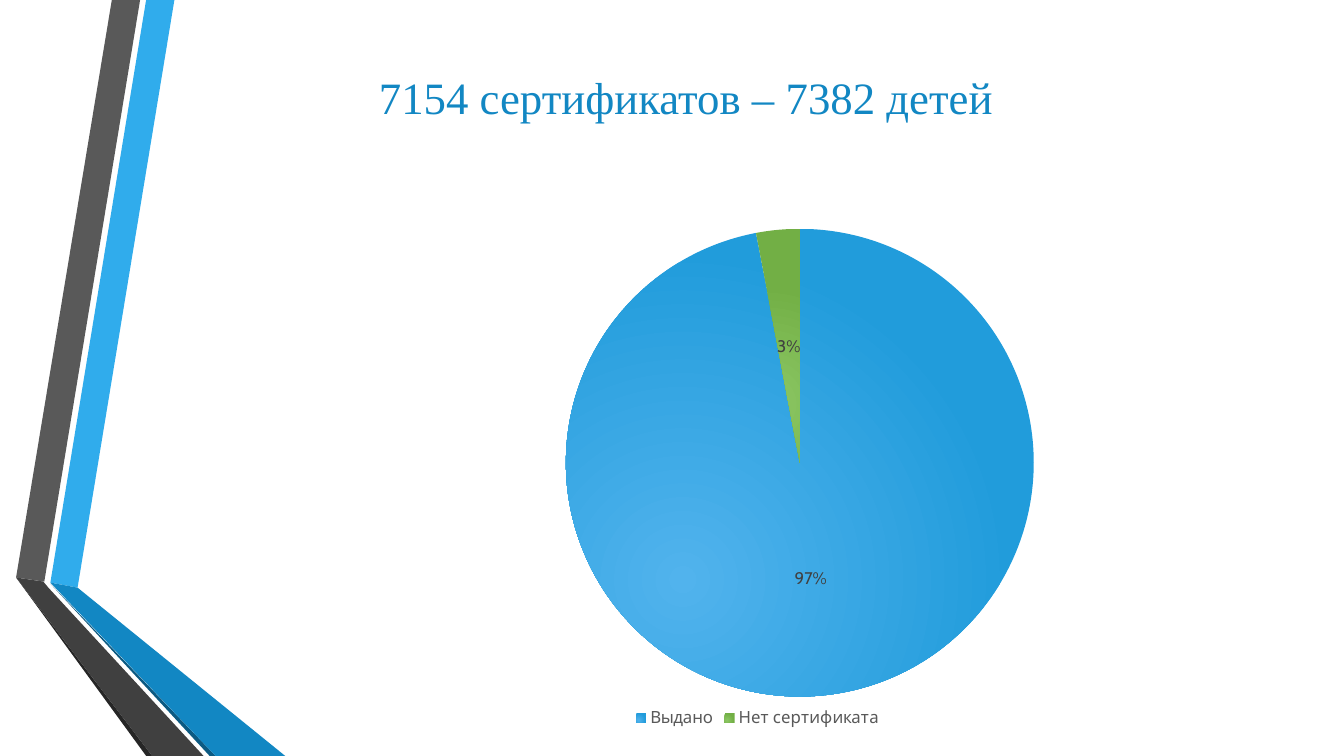
import pptx
import pptx.chart.data
import pptx.dml.color
import pptx.enum.chart
import pptx.enum.text
import pptx.oxml
import pptx.oxml.ns
import pptx.util

PX = 9144
HUES = {
    "sky": "30ACEC", "gray": "595959", "black": "262626", "navy": "0C5A82",
    "blue": "1287C3", "dark": "404040",
}
BANDS = [
    ("sky", [(50, 578), (77, 583), (173, 0), (145, 0)]),
    ("gray", [(139, 0), (111, 0), (16, 573), (44, 577)]),
    ("black", [(16, 573), (145, 750), (151, 750)]),
    ("navy", [(50, 579), (208, 750), (214, 750)]),
    ("blue", [(50, 578), (214, 750), (283, 750), (77, 583)]),
    ("dark", [(202, 750), (48, 583), (43, 577), (16, 573), (151, 750)]),
]
SLICES = [
    ("Выдано", 97, "51B3ED", "219CDB"),
    ("Нет сертификата", 3, "8CC764", "72AF45"),
]


class Deck:
    """Holds the style and the current slide, and draws each kind of element."""

    def __init__(self, wide, high):
        self.file = pptx.Presentation()
        self.file.slide_width = wide * PX
        self.file.slide_height = high * PX
        self.slide = self.file.slides.add_slide(self.file.slide_layouts[5])

    def style(self, font, face, size, hue):
        font.name = face
        font.size = pptx.util.Pt(size)
        font.color.rgb = pptx.dml.color.RGBColor.from_string(HUES[hue])

    def title(self, text, box):
        shape = self.slide.shapes.title
        shape.left, shape.top, shape.width, shape.height = [n * PX for n in box]
        frame = shape.text_frame
        frame.text = text
        frame.vertical_anchor = pptx.enum.text.MSO_ANCHOR.MIDDLE
        line = frame.paragraphs[0]
        line.alignment = pptx.enum.text.PP_ALIGN.CENTER
        self.style(line.font, "Times New Roman", 32, "blue")

    def band(self, hue, points):
        pen = self.slide.shapes.build_freeform(*points[0], scale=PX)
        pen.add_line_segments(points[1:], close=True)
        shape = pen.convert_to_shape()
        shape.shadow.inherit = False
        shape.fill.solid()
        shape.fill.fore_color.rgb = pptx.dml.color.RGBColor.from_string(HUES[hue])
        shape.line.fill.background()

    def glow(self, point, inner, outer):
        point.format.line.fill.background()
        point.format.fill.solid()
        grad = pptx.oxml.parse_xml(
            f'<a:gradFill {pptx.oxml.ns.nsdecls("a")} rotWithShape="1"><a:gsLst>'
            f'<a:gs pos="0"><a:srgbClr val="{inner}"/></a:gs>'
            f'<a:gs pos="100000"><a:srgbClr val="{outer}"/></a:gs></a:gsLst>'
            '<a:path path="circle"><a:fillToRect l="50000" t="100000" '
            'r="100000" b="50000"/></a:path></a:gradFill>')
        old = self.chart.element.xpath(".//c:dPt/c:spPr/a:solidFill")[0]
        old.getparent().replace(old, grad)

    def place(self, x, y, w, h):
        area = self.chart.element.xpath(".//c:plotArea")[0]
        for old in area.xpath("./c:layout"):
            area.remove(old)
        area.insert(0, pptx.oxml.parse_xml(
            f'<c:layout {pptx.oxml.ns.nsdecls("c")}><c:manualLayout>'
            '<c:layoutTarget val="inner"/><c:xMode val="edge"/><c:yMode val="edge"/>'
            f'<c:x val="{x}"/><c:y val="{y}"/><c:w val="{w}"/><c:h val="{h}"/>'
            '</c:manualLayout></c:layout>'))

    def pie(self, slices, box):
        data = pptx.chart.data.CategoryChartData()
        data.categories = [part[0] for part in slices]
        data.add_series("Series 1", [part[1] for part in slices])
        self.chart = chart = self.slide.shapes.add_chart(
            pptx.enum.chart.XL_CHART_TYPE.PIE, *[n * PX for n in box], data).chart
        chart.has_title = False
        chart.has_legend = True
        chart.legend.position = pptx.enum.chart.XL_LEGEND_POSITION.BOTTOM
        chart.legend.include_in_layout = False
        self.style(chart.legend.font, "Cabin", 12, "gray")
        plot = chart.plots[0]
        plot.vary_by_categories = True
        plot.has_data_labels = True
        tags = plot.data_labels
        tags.show_percentage = True
        tags.show_value = False
        tags.number_format = "0%"
        tags.number_format_is_linked = False
        tags.position = pptx.enum.chart.XL_LABEL_POSITION.CENTER
        self.style(tags.font, "Cabin", 12, "dark")
        for i, (name, value, inner, outer) in enumerate(slices):
            self.glow(plot.series[0].points[i], inner, outer)
        self.place(0.09, 0, 0.91, 0.93)


def main():
    deck = Deck(1333, 750)
    for hue, points in BANDS:
        deck.band(hue, points)
    deck.title("7154 сертификатов – 7382 детей", (103, 0, 1155, 191))
    deck.pie(SLICES, (287, 227, 929, 499))
    deck.file.save("out.pptx")


if __name__ == "__main__":
    main()
